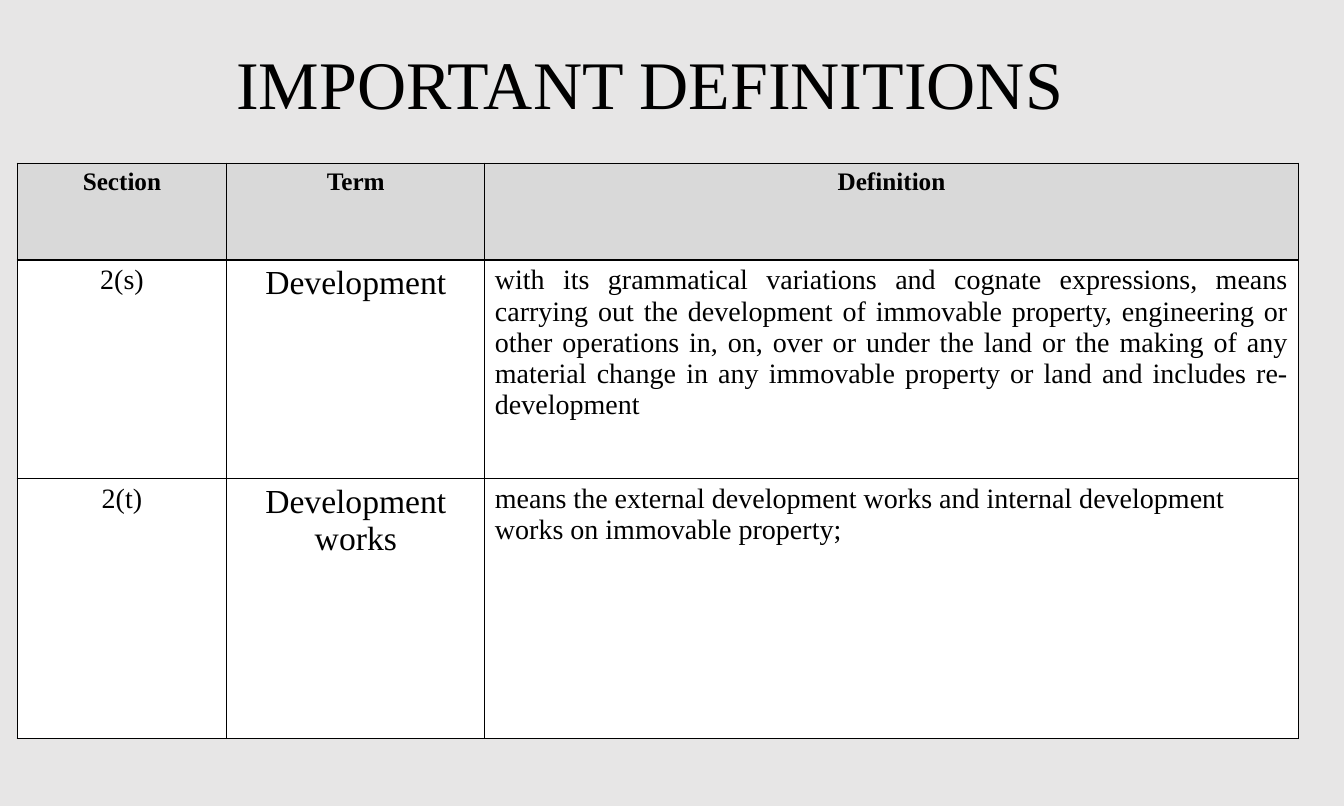
"""Build a slide with a table of important definitions."""
from dataclasses import dataclass

from lxml.etree import SubElement
from pptx import Presentation
from pptx.dml.color import RGBColor
from pptx.enum.text import MSO_ANCHOR, MSO_AUTO_SIZE, PP_ALIGN
from pptx.oxml import parse_xml
from pptx.oxml.ns import nsdecls, qn
from pptx.util import Inches, Pt


@dataclass(frozen=True)
class Theme:
    font: str = "Times New Roman"
    ink: str = "000000"
    background: str = "E7E6E6"
    header_fill: str = "D9D9D9"
    body_fill: str = "FFFFFF"
    title_size: float = 48.6
    header_size: int = 18
    column_sizes: tuple = (20, 24, 20)
    border_width: int = 1


THEME = Theme()
SLIDE_SIZE = (40 / 3, 8)
LEFT, WIDTH = 0.17, 12.71
TITLE_TOP, TITLE_HEIGHT = 0.51, 0.77
TABLE_TOP = 1.62
COLUMN_WIDTHS = (2.08, 2.56, 8.07)
ROW_HEIGHTS = (0.96, 2.17, 2.58)

TITLE = "IMPORTANT DEFINITIONS"
HEADER = ("Section", "Term", "Definition")
DEFINITIONS = [
    ("2(s)", "Development",
     "with its grammatical variations and cognate expressions, means carrying out "
     "the development of immovable property, engineering or other operations in, on, "
     "over or under the land or the making of any material change in any immovable "
     "property or land and includes re-development", PP_ALIGN.JUSTIFY),
    ("2(t)", "Development works",
     "means the external development works and internal development works on "
     "immovable property;", PP_ALIGN.LEFT),
]


def format_paragraph(paragraph, size, alignment, bold=False):
    paragraph.alignment = alignment
    font = paragraph.font
    font.name, font.size, font.bold = THEME.font, Pt(size), bold
    font.color.rgb = RGBColor.from_string(THEME.ink)


def add_borders(cell):
    properties = cell._tc.get_or_add_tcPr()
    for index, side in enumerate(("lnL", "lnR", "lnT", "lnB")):
        line = parse_xml(f'<a:{side} {nsdecls("a")} w="{Pt(THEME.border_width)}"/>')
        fill = SubElement(line, qn("a:solidFill"))
        SubElement(fill, qn("a:srgbClr"), val=THEME.ink)
        properties.insert(index, line)


def fill_cell(cell, text, fill, size, alignment, bold=False):
    cell.text = text
    cell.fill.solid()
    cell.fill.fore_color.rgb = RGBColor.from_string(fill)
    format_paragraph(cell.text_frame.paragraphs[0], size, alignment, bold)
    add_borders(cell)


def add_title(slide):
    title = slide.shapes.title
    title.left, title.top = Inches(LEFT), Inches(TITLE_TOP)
    title.width, title.height = Inches(WIDTH), Inches(TITLE_HEIGHT)
    frame = title.text_frame
    frame.text = TITLE
    frame.word_wrap = True
    frame.auto_size = MSO_AUTO_SIZE.NONE
    frame.vertical_anchor = MSO_ANCHOR.BOTTOM
    frame.margin_right = Inches(0.26)
    paragraph = frame.paragraphs[0]
    paragraph.line_spacing = 0.9
    format_paragraph(paragraph, THEME.title_size, PP_ALIGN.CENTER)


def add_definitions(slide):
    table = slide.shapes.add_table(
        len(ROW_HEIGHTS), len(COLUMN_WIDTHS), Inches(LEFT), Inches(TABLE_TOP),
        Inches(WIDTH), Inches(sum(ROW_HEIGHTS))).table
    for column, width in zip(table.columns, COLUMN_WIDTHS):
        column.width = Inches(width)
    for row, height in zip(table.rows, ROW_HEIGHTS):
        row.height = Inches(height)
    for index, text in enumerate(HEADER):
        fill_cell(table.cell(0, index), text, THEME.header_fill,
                  THEME.header_size, PP_ALIGN.CENTER, bold=True)
    for row, (*texts, alignment) in enumerate(DEFINITIONS, start=1):
        alignments = (PP_ALIGN.CENTER, PP_ALIGN.CENTER, alignment)
        for index, text in enumerate(texts):
            fill_cell(table.cell(row, index), text, THEME.body_fill,
                      THEME.column_sizes[index], alignments[index])


def main():
    presentation = Presentation()
    presentation.slide_width, presentation.slide_height = map(Inches, SLIDE_SIZE)
    slide = presentation.slides.add_slide(presentation.slide_layouts.get_by_name("Title Only"))
    slide.background.fill.solid()
    slide.background.fill.fore_color.rgb = RGBColor.from_string(THEME.background)
    add_title(slide)
    add_definitions(slide)
    presentation.save("out.pptx")


if __name__ == "__main__":
    main()
